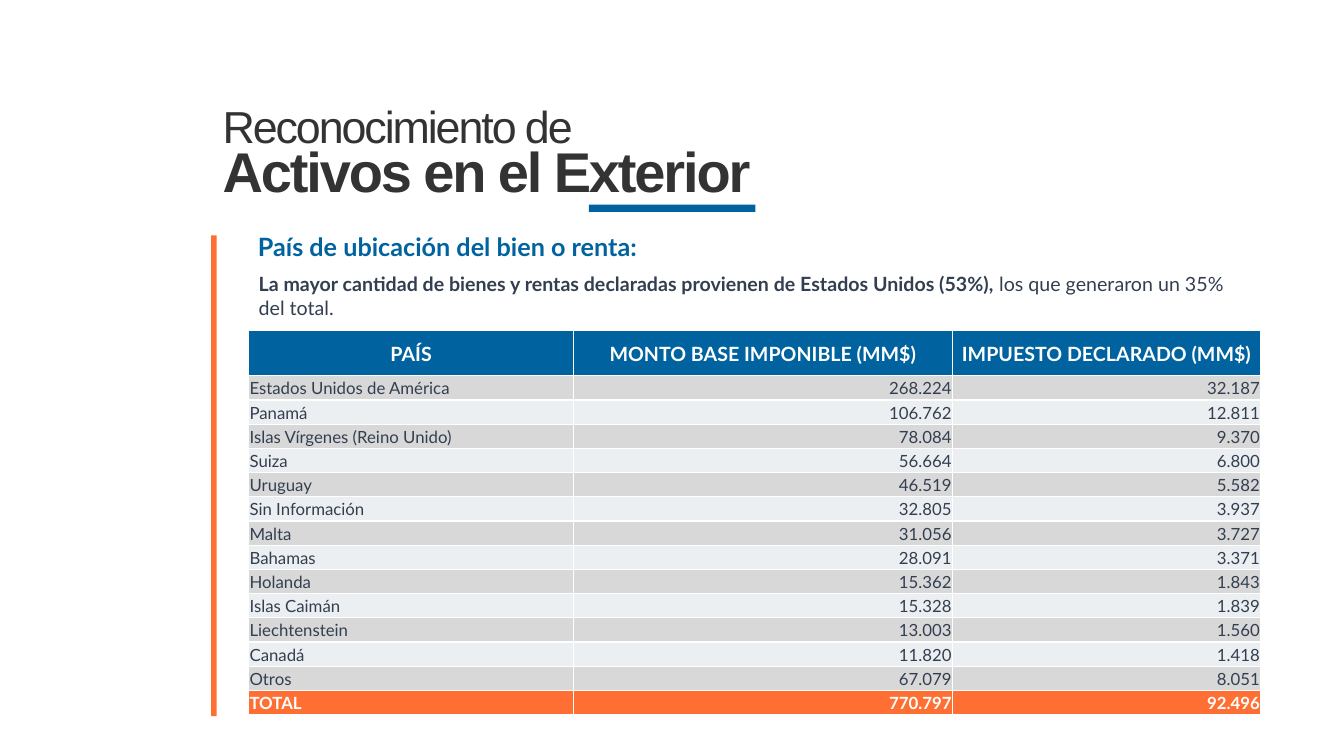
from lxml.etree import SubElement
from pptx import Presentation
from pptx.dml.color import RGBColor
from pptx.enum.shapes import MSO_SHAPE as Shape
from pptx.enum.text import MSO_ANCHOR as Anchor, PP_ALIGN as Align
from pptx.oxml.ns import qn
from pptx.util import Cm, Pt

BLUE = RGBColor(0x00, 0x63, 0xA0)
ORANGE = RGBColor(0xFF, 0x6F, 0x33)
CHARCOAL = RGBColor(0x33, 0x33, 0x33)
SLATE = RGBColor(0x33, 0x3F, 0x50)
GREY = RGBColor(0xD8, 0xD8, 0xD8)
PALE = RGBColor(0xEC, 0xEF, 0xF1)
WHITE = RGBColor(0xFF, 0xFF, 0xFF)

HEADERS = ("PAÍS", "MONTO BASE IMPONIBLE (MM$)", "IMPUESTO DECLARADO (MM$)")
COUNTRIES = [
    ("Estados Unidos de América", "268.224", "32.187"),
    ("Panamá", "106.762", "12.811"),
    ("Islas Vírgenes (Reino Unido)", "78.084", "9.370"),
    ("Suiza", "56.664", "6.800"),
    ("Uruguay", "46.519", "5.582"),
    ("Sin Información", "32.805", "3.937"),
    ("Malta", "31.056", "3.727"),
    ("Bahamas", "28.091", "3.371"),
    ("Holanda", "15.362", "1.843"),
    ("Islas Caimán", "15.328", "1.839"),
    ("Liechtenstein", "13.003", "1.560"),
    ("Canadá", "11.820", "1.418"),
    ("Otros", "67.079", "8.051"),
]
TOTAL = ("TOTAL", "770.797", "92.496")


class SlideBuilder:
    title_font = "Arial"
    body_font = "Lato"

    def __init__(self, slide):
        self.slide = slide

    def add_run(self, paragraph, text, size, color, bold=False, font=None, spacing=None):
        run = paragraph.add_run()
        run.text = text
        run.font.name = font or self.body_font
        run.font.size = Pt(size)
        run.font.bold = bold
        run.font.color.rgb = color
        if spacing is not None:
            run.font._element.set("spc", str(round(spacing * 100)))

    def add_bar(self, left, top, width, height, color):
        shape = self.slide.shapes.add_shape(
            Shape.RECTANGLE, Cm(left), Cm(top), Cm(width), Cm(height))
        shape.shadow.inherit = False
        shape.fill.solid()
        shape.fill.fore_color.rgb = color
        shape.line.fill.background()

    def add_text(self, left, top, width, height):
        box = self.slide.shapes.add_textbox(Cm(left), Cm(top), Cm(width), Cm(height))
        box.text_frame.word_wrap = True
        return box.text_frame

    def add_title(self, left, top, width, height, lines):
        frame = self.add_text(left, top, width, height)
        for index, (text, size, bold) in enumerate(lines):
            paragraph = frame.add_paragraph() if index else frame.paragraphs[0]
            paragraph.line_spacing = Pt(37)
            self.add_run(paragraph, text, size, CHARCOAL, bold, self.title_font, -1.5)

    def add_borders(self, cell):
        properties = cell._tc.get_or_add_tcPr()
        for side in ("a:lnL", "a:lnR", "a:lnT", "a:lnB"):
            line = SubElement(properties, qn(side), w=str(Pt(1)))
            fill = SubElement(line, qn("a:solidFill"))
            SubElement(fill, qn("a:srgbClr"), val=str(WHITE))

    def fill_cell(self, cell, text, size, color, bold, align, background):
        self.add_borders(cell)
        cell.fill.solid()
        cell.fill.fore_color.rgb = background
        cell.vertical_anchor = Anchor.MIDDLE
        cell.margin_left = cell.margin_right = cell.margin_top = Cm(0.02)
        cell.margin_bottom = 0
        paragraph = cell.text_frame.paragraphs[0]
        paragraph.alignment = align
        self.add_run(paragraph, text, size, color, bold)

    def add_table(self, left, top, widths, header_height, row_height):
        rows = [HEADERS, *COUNTRIES, TOTAL]
        height = header_height + row_height * (len(rows) - 1)
        table = self.slide.shapes.add_table(
            len(rows), len(widths), Cm(left), Cm(top), Cm(sum(widths)), Cm(height)).table
        for column, width in zip(table.columns, widths):
            column.width = Cm(width)
        for index, values in enumerate(rows):
            header, total = values is HEADERS, values is TOTAL
            table.rows[index].height = Cm(header_height if header else row_height)
            if header:
                background = BLUE
            elif total:
                background = ORANGE
            else:
                background = GREY if index % 2 else PALE
            emphasis = header or total
            for position, text in enumerate(values):
                align = Align.CENTER if header else Align.RIGHT if position else Align.LEFT
                self.fill_cell(table.cell(index, position), text, 14 if header else 12,
                               WHITE if emphasis else SLATE, emphasis, align, background)


def main():
    presentation = Presentation()
    presentation.slide_width = Cm(33.87)
    presentation.slide_height = Cm(19.05)
    slide = presentation.slides.add_slide(presentation.slide_layouts[6])
    builder = SlideBuilder(slide)

    builder.add_bar(14.84, 5.16, 4.2, 0.18, BLUE)
    builder.add_title(5.36, 2.41, 14.3, 2.82, [
        ("Reconocimiento de", 32, False),
        ("Activos en el Exterior", 40, True),
    ])

    heading = builder.add_text(6.25, 5.66, 16.94, 1.04).paragraphs[0]
    heading.alignment = Align.JUSTIFY
    heading.line_spacing = 1.07
    heading.space_after = Pt(8)
    builder.add_run(heading, "País de ubicación del bien o renta:", 18, BLUE, True)

    builder.add_bar(5.32, 5.93, 0.14, 12.12, ORANGE)
    builder.add_table(6.27, 8.33, (8.18, 9.55, 7.77), 1.14, 0.61)

    summary = builder.add_text(6.27, 6.73, 25.5, 1.45).paragraphs[0]
    builder.add_run(summary, "La mayor cantidad de bienes y rentas declaradas provienen "
                    "de Estados Unidos (53%), ", 14, SLATE, True)
    builder.add_run(summary, "los que generaron un 35% del total.", 14, SLATE)

    presentation.save("out.pptx")


if __name__ == "__main__":
    main()
